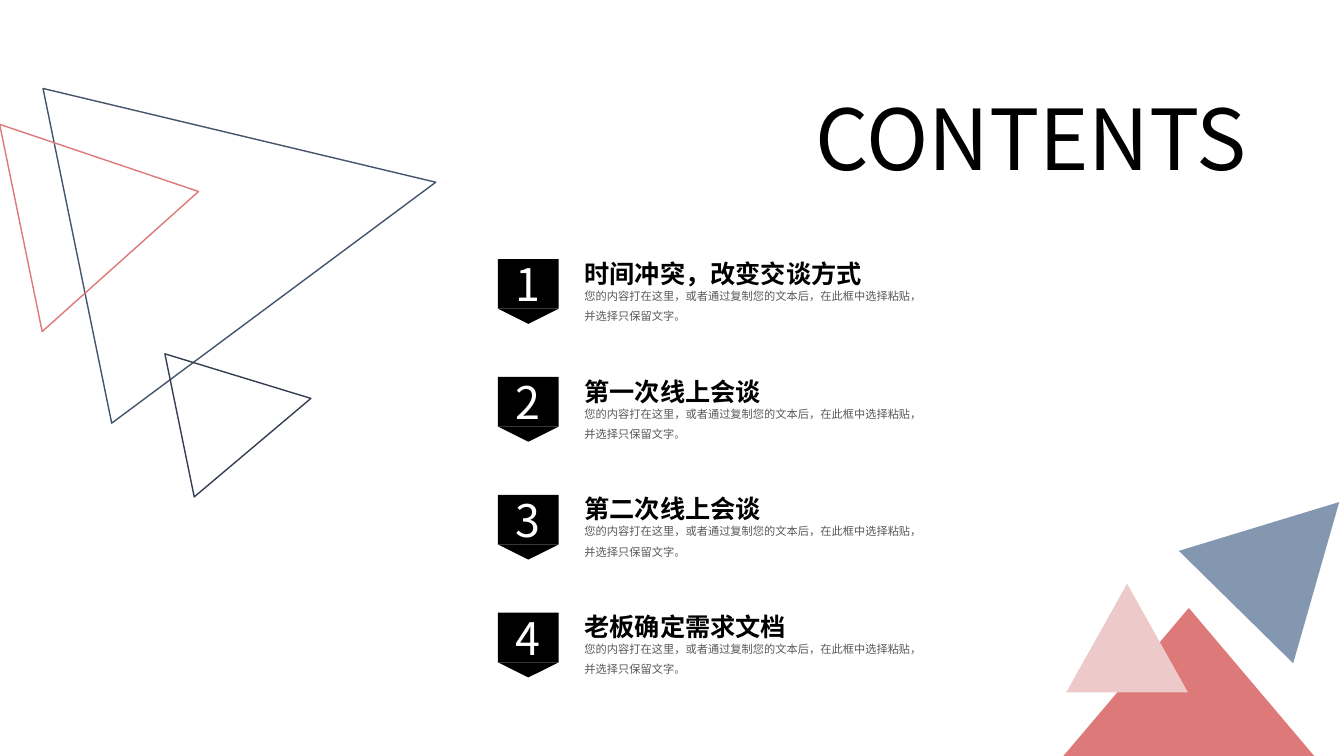
from pptx import Presentation
from pptx.dml.color import RGBColor
from pptx.enum.shapes import MSO_SHAPE
from pptx.enum.text import MSO_ANCHOR, MSO_AUTO_SIZE, PP_ALIGN
from pptx.oxml.ns import qn
from pptx.util import Cm, Pt
from lxml import etree

TRIANGLE = MSO_SHAPE.ISOSCELES_TRIANGLE
RECTANGLE = MSO_SHAPE.RECTANGLE
TOP, MIDDLE = MSO_ANCHOR.TOP, MSO_ANCHOR.MIDDLE
LEFT, CENTER = PP_ALIGN.LEFT, PP_ALIGN.CENTER
NO_AUTOFIT = MSO_AUTO_SIZE.NONE

BLACK = RGBColor(0x00, 0x00, 0x00)
WHITE = RGBColor(0xFF, 0xFF, 0xFF)
GRAY = RGBColor(0x59, 0x59, 0x59)
SLATE = RGBColor(0x44, 0x54, 0x6A)
NAVY = RGBColor(0x33, 0x3F, 0x50)
RED = RGBColor(0xDD, 0x79, 0x79)
PINK = RGBColor(0xED, 0xC9, 0xC9)
BLUE = RGBColor(0x84, 0x97, 0xB0)

FONT = "Noto Sans CJK SC"
BODY = "您的内容打在这里，或者通过复制您的文本后，在此框中选择粘贴，并选择只保留文字。"
ITEMS = ["时间冲突，改变交谈方式", "第一次线上会谈", "第二次线上会谈", "老板确定需求文档"]
ITEM_TOP, ITEM_PITCH = 6.53, 2.97
BADGE_LEFT, BADGE_WIDTH, BADGE_HEIGHT, TIP_HEIGHT = 12.55, 1.53, 1.25, 0.38
TEXT_LEFT, TEXT_WIDTH = 14.48, 9.04


def add_shape(kind, x, y, w, h, rotation=0, fill=None, line=None):
    sp = s.shapes.add_shape(kind, Cm(x), Cm(y), Cm(w), Cm(h))
    sp.rotation = rotation
    sp.shadow.inherit = False
    if fill is None:
        sp.fill.background()
    else:
        sp.fill.solid()
        sp.fill.fore_color.rgb = fill
    if line is None:
        sp.line.fill.background()
    else:
        sp.line.color.rgb = line
        sp.line.width = Pt(1)
    return sp


def write(sp, text, size, color, bold=False, align=LEFT, anchor=TOP, spacing=1.0):
    tf = sp.text_frame
    tf.text = text
    tf.word_wrap = True
    tf.auto_size = NO_AUTOFIT
    tf.vertical_anchor = anchor
    p = tf.paragraphs[0]
    p.alignment = align
    p.line_spacing = spacing
    r = p.runs[0]
    r.font.name = FONT
    r.font.size = Pt(size)
    r.font.bold = bold
    r.font.color.rgb = color
    ea = etree.SubElement(r.font._element, qn("a:ea"))
    ea.set("typeface", FONT)


prs = Presentation()
prs.slide_width, prs.slide_height = Cm(33.87), Cm(19.05)
s = prs.slides.add_slide(prs.slide_layouts[5])

title = s.shapes.title
title.left, title.top, title.width, title.height = Cm(19.41), Cm(2.06), Cm(13.13), Cm(2.82)
write(title, "CONTENTS", 60, BLACK, align=CENTER)

for x, y, w, h, color in [
    (2.16, 0.91, 8.61, 9.22, SLATE),
    (4.34, 8.69, 3.68, 3.38, NAVY),
    (0.1, 3, 5.33, 4.57, RED),
]:
    add_shape(TRIANGLE, x, y, w, h, rotation=78.4, line=color)

for x, y, w, h, rotation, color in [
    (26.8, 15.32, 6.32, 3.73, 0, RED),
    (26.87, 14.71, 3.07, 2.74, 0, PINK),
    (30.43, 12.12, 4.04, 3.71, 44.5, BLUE),
]:
    add_shape(TRIANGLE, x, y, w, h, rotation=rotation, fill=color)

for i, heading in enumerate(ITEMS):
    y = ITEM_TOP + i * ITEM_PITCH
    badge = add_shape(RECTANGLE, BADGE_LEFT, y, BADGE_WIDTH, BADGE_HEIGHT, fill=BLACK)
    write(badge, str(i + 1), 32, WHITE, align=CENTER, anchor=MIDDLE)
    add_shape(TRIANGLE, BADGE_LEFT, y + BADGE_HEIGHT, BADGE_WIDTH, TIP_HEIGHT,
              rotation=180, fill=BLACK)
    for text, offset, height, size, color, bold, spacing in [
        (heading, -0.38, 1.17, 18, BLACK, True, 1.3),
        (BODY, 0.46, 1.22, 8, GRAY, False, 1.5),
    ]:
        box = s.shapes.add_textbox(Cm(TEXT_LEFT), Cm(y + offset), Cm(TEXT_WIDTH), Cm(height))
        write(box, text, size, color, bold=bold, spacing=spacing)

prs.save("out.pptx")
